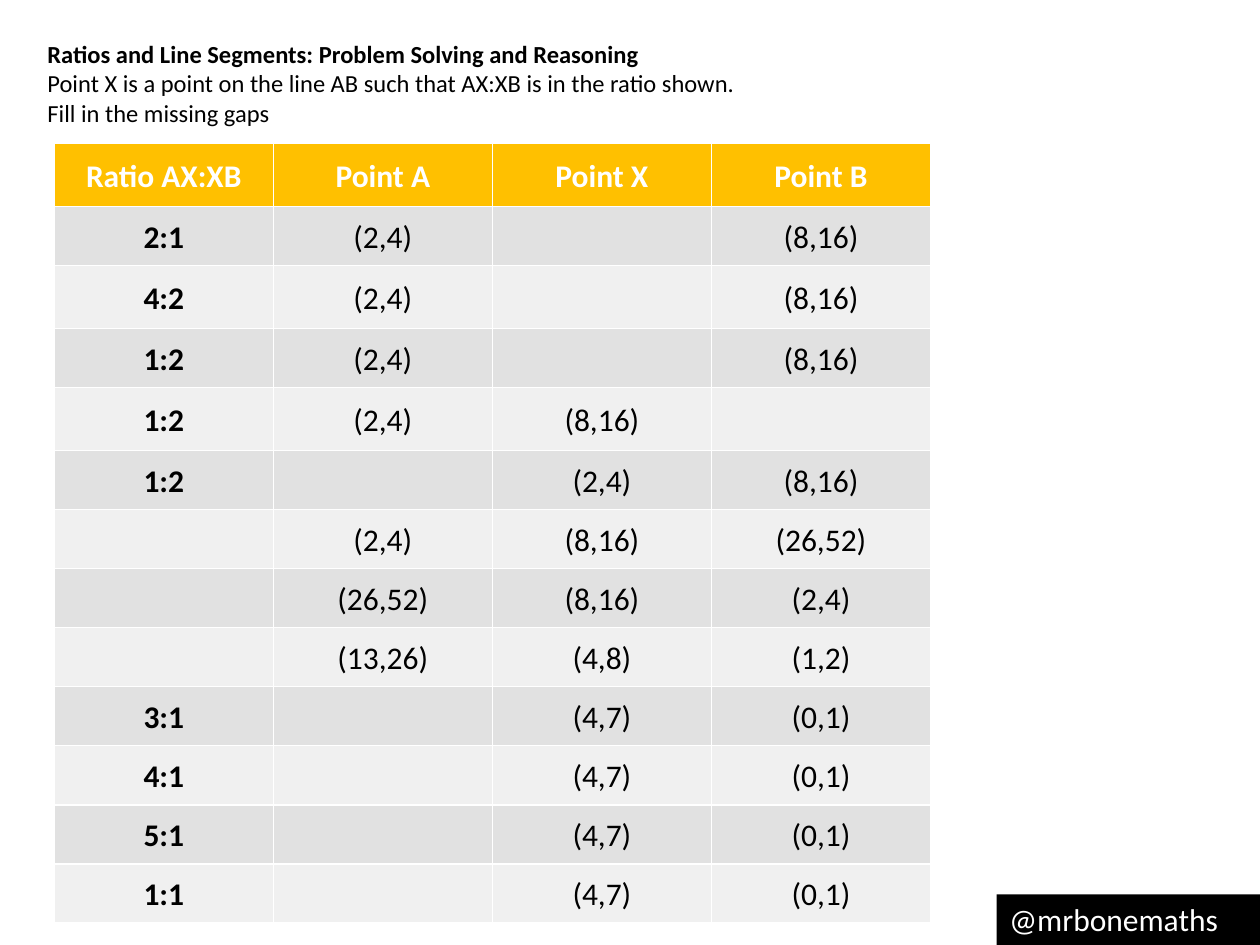
from pptx import Presentation
from pptx.dml.color import RGBColor
from pptx.enum import shapes, text
from pptx.util import Pt

BLACK = RGBColor(0x00, 0x00, 0x00)
WHITE = RGBColor(0xFF, 0xFF, 0xFF)
AMBER = RGBColor(0xFF, 0xC0, 0x00)
GREY = RGBColor(0xE1, 0xE1, 0xE1)
PALE_GREY = RGBColor(0xF0, 0xF0, 0xF0)


def write(paragraph, words, size=18, color=BLACK, bold=False,
          align=text.PP_ALIGN.LEFT, spacing=None):
    paragraph.alignment = align
    paragraph.line_spacing = spacing
    paragraph.font.size = Pt(size)
    if words:
        run = paragraph.add_run()
        run.text = words
        run.font.name = "Calibri"
        run.font.size = Pt(size)
        run.font.bold = bold
        run.font.color.rgb = color


prs = Presentation()
prs.slide_width, prs.slide_height = Pt(720), Pt(540)
slide = prs.slides.add_slide(prs.slide_layouts[6])

# Author handle in the bottom right corner
handle = slide.shapes.add_shape(shapes.MSO_SHAPE.RECTANGLE,
                                Pt(569.5), Pt(511), Pt(150.5), Pt(29))
handle.shadow.inherit = False
handle.fill.solid()
handle.fill.fore_color.rgb = BLACK
handle.line.fill.background()
handle.text_frame.vertical_anchor = text.MSO_ANCHOR.TOP
write(handle.text_frame.paragraphs[0], "@mrbonemaths", color=WHITE)

# Table of ratios and points, with gaps to fill in
ratio_rows = [
    ("Ratio AX:XB", "Point A", "Point X", "Point B"),
    ("2:1", "(2,4)", "", "(8,16)"),
    ("4:2", "(2,4)", "", "(8,16)"),
    ("1:2", "(2,4)", "", "(8,16)"),
    ("1:2", "(2,4)", "(8,16)", ""),
    ("1:2", "", "(2,4)", "(8,16)"),
    ("", "(2,4)", "(8,16)", "(26,52)"),
    ("", "(26,52)", "(8,16)", "(2,4)"),
    ("", "(13,26)", "(4,8)", "(1,2)"),
    ("3:1", "", "(4,7)", "(0,1)"),
    ("4:1", "", "(4,7)", "(0,1)"),
    ("5:1", "", "(4,7)", "(0,1)"),
    ("1:1", "", "(4,7)", "(0,1)"),
]
TALL_ROWS = (0, 2, 4)
ratios = slide.shapes.add_table(len(ratio_rows), 4, Pt(31), Pt(82),
                                Pt(500.8), Pt(445.5)).table
for column in ratios.columns:
    column.width = Pt(125.2)
for r, entries in enumerate(ratio_rows):
    ratios.rows[r].height = Pt(36 if r in TALL_ROWS else 33.75)
    header = r == 0
    row_fill = AMBER if header else GREY if r % 2 else PALE_GREY
    for c, entry in enumerate(entries):
        cell = ratios.cell(r, c)
        cell.fill.solid()
        cell.fill.fore_color.rgb = row_fill
        cell.vertical_anchor = text.MSO_ANCHOR.MIDDLE
        cell.margin_left = cell.margin_right = Pt(4.5)
        cell.margin_top = cell.margin_bottom = 0
        write(cell.text_frame.paragraphs[0], entry,
              color=WHITE if header else BLACK, bold=header or c == 0,
              align=text.PP_ALIGN.CENTER, spacing=1.07)

# Title and instructions
intro_lines = [
    "Ratios and Line Segments: Problem Solving and Reasoning",
    "Point X is a point on the line AB such that AX:XB is in the ratio shown.",
    "Fill in the missing gaps",
]
intro = slide.shapes.add_textbox(Pt(20), Pt(29.5), Pt(720), Pt(36)).text_frame
intro.word_wrap = True
intro.vertical_anchor = text.MSO_ANCHOR.MIDDLE
for i, line in enumerate(intro_lines):
    paragraph = intro.add_paragraph() if i else intro.paragraphs[0]
    write(paragraph, line, size=14, bold=i == 0)

prs.save("out.pptx")
